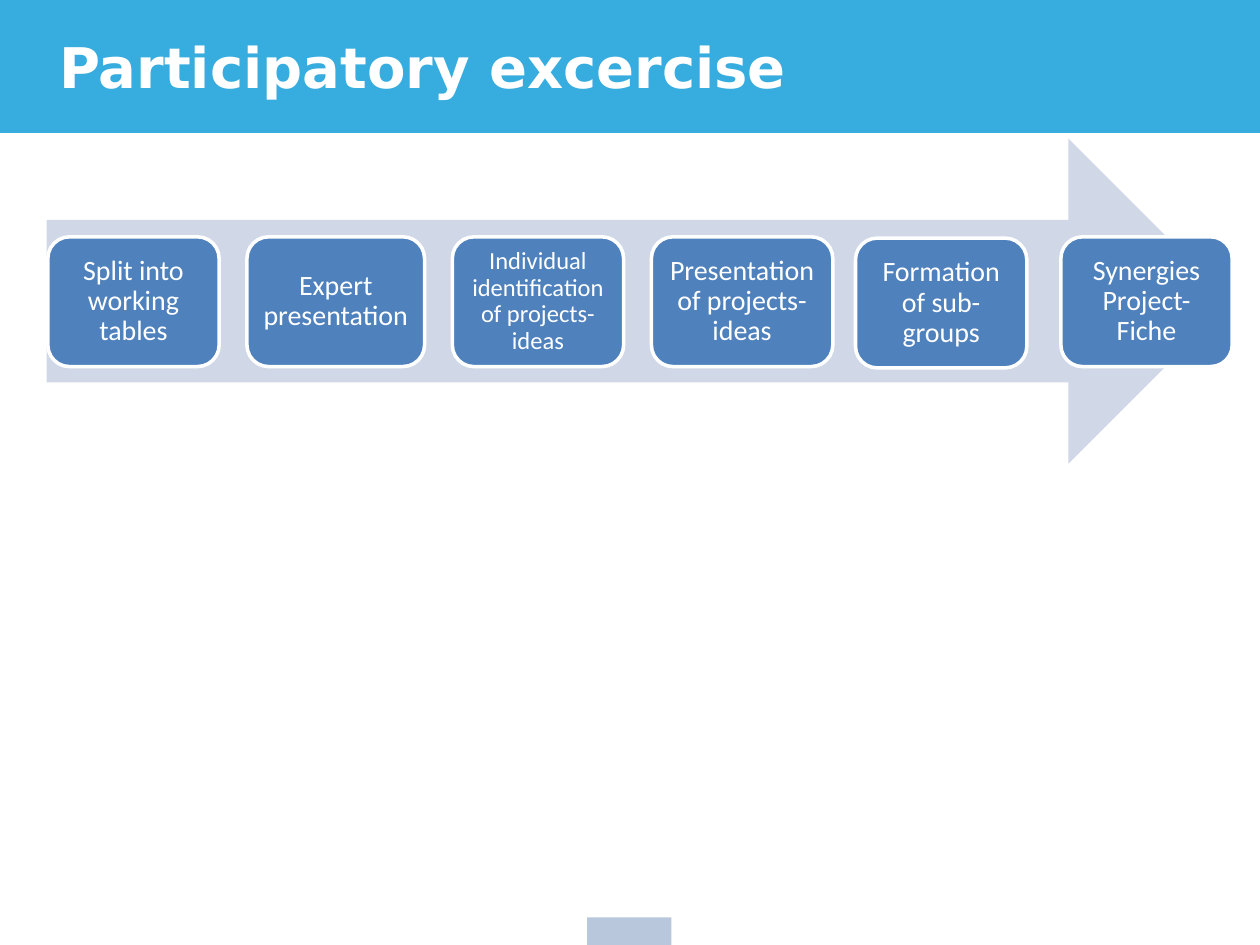
import pptx
import pptx.util
import pptx.dml.color
import pptx.enum.shapes
import pptx.enum.text

Inches = pptx.util.Inches
Pt = pptx.util.Pt
kinds = pptx.enum.shapes.MSO_SHAPE
align = pptx.enum.text.PP_ALIGN
anchor = pptx.enum.text.MSO_ANCHOR


def color(code):
    return pptx.dml.color.RGBColor.from_string(code)


def block(kind, left, top, width, height, fill, line=None, weight=0.75):
    shape = slide.shapes.add_shape(
        kind, Inches(left), Inches(top), Inches(width), Inches(height))
    shape.shadow.inherit = False
    shape.fill.solid()
    shape.fill.fore_color.rgb = color(fill)
    if line:
        shape.line.color.rgb = color(line)
        shape.line.width = Pt(weight)
    else:
        shape.line.fill.background()
    return shape


deck = pptx.Presentation()
deck.slide_width = Inches(10)
deck.slide_height = Inches(7.5)
slide = deck.slides.add_slide(deck.slide_layouts[5])

block(kinds.RECTANGLE, 0, 0, 10, 1.05, "37ACDE", "37ACDE")
block(kinds.RECTANGLE, 4.66, 7.28, 0.67, 0.22, "B9C7DC")

title = slide.shapes.title
slide.shapes._spTree.append(title._element)
title.left, title.top = Inches(0.37), Inches(0.21)
title.width, title.height = Inches(9.84), Inches(0.64)
frame = title.text_frame
frame.text = "Participatory excercise"
frame.vertical_anchor = anchor.TOP
frame.auto_size = pptx.enum.text.MSO_AUTO_SIZE.NONE
para = frame.paragraphs[0]
para.alignment = align.LEFT
font = para.runs[0].font
font.name = "DejaVu Sans"
font.size = Pt(32)
font.bold = True
font.color.rgb = color("FFFFFF")

block(kinds.RIGHT_ARROW, 0.37, 1.1, 9.4, 2.58, "D0D8E8")

steps = [
    ("Split into working tables", 0.38, 1.88, 1.36, 16, 0.07),
    ("Expert presentation", 1.96, 1.88, 1.41, 16, 0.07),
    ("Individual identification of projects-ideas", 3.59, 1.88, 1.36, 14, 0.06),
    ("Presentation of projects-ideas", 5.17, 1.88, 1.44, 16, 0.07),
    ("Formation of sub-groups", 6.79, 1.89, 1.36, 16, 0.07),
    ("Synergies Project-Fiche", 8.42, 1.88, 1.36, 16, 0.07),
]
for text, left, top, width, size, inset in steps:
    step = block(kinds.ROUNDED_RECTANGLE, left, top, width, 1.03,
                 "4F81BD", "FFFFFF", 2)
    frame = step.text_frame
    frame.text = text
    frame.word_wrap = True
    frame.vertical_anchor = anchor.MIDDLE
    frame.margin_left = frame.margin_right = Inches(inset)
    frame.margin_top = frame.margin_bottom = Inches(inset)
    para = frame.paragraphs[0]
    para.alignment = align.CENTER
    para.line_spacing = 0.9
    font = para.runs[0].font
    font.name = "Calibri"
    font.size = Pt(size)
    font.color.rgb = color("FFFFFF")

deck.save("out.pptx")
